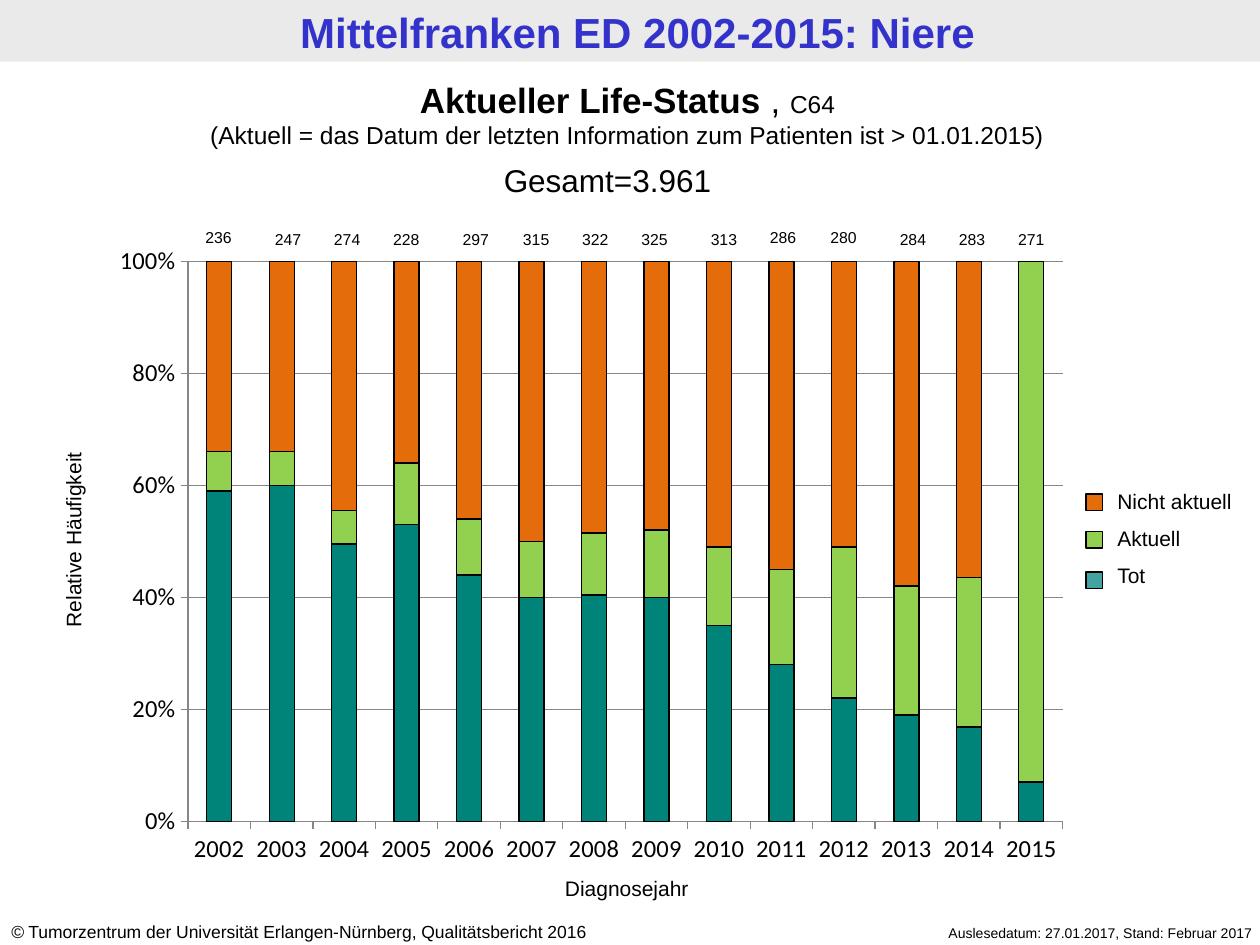
from dataclasses import dataclass

from lxml import etree
from pptx import Presentation
from pptx.chart.data import CategoryChartData
from pptx.dml.color import RGBColor
from pptx.enum.chart import XL_CHART_TYPE, XL_TICK_MARK
from pptx.enum.shapes import MSO_SHAPE
from pptx.enum.text import MSO_ANCHOR, MSO_AUTO_SIZE, PP_ALIGN
from pptx.oxml import parse_xml
from pptx.oxml.ns import nsdecls, qn
from pptx.util import Inches, Pt

LEFT, CENTER, RIGHT = PP_ALIGN.LEFT, PP_ALIGN.CENTER, PP_ALIGN.RIGHT
MIDDLE, GROW, NO_FIT = MSO_ANCHOR.MIDDLE, MSO_AUTO_SIZE.SHAPE_TO_FIT_TEXT, MSO_AUTO_SIZE.NONE
STACKED_100 = XL_CHART_TYPE.COLUMN_STACKED_100
TICK_OUT, RECTANGLE = XL_TICK_MARK.OUTSIDE, MSO_SHAPE.RECTANGLE


@dataclass(frozen=True)
class Theme:
    """Colours, fonts and type sizes in points."""
    black: str = "000000"
    band: str = "EAEAEA"
    title: str = "3333CC"
    grid: str = "868686"
    dead: str = "008378"
    dead_key: str = "008380"
    current: str = "92D050"
    outdated: str = "E46C0A"
    text_font: str = "Arial"
    chart_font: str = "Calibri"
    title_size: int = 24
    heading: int = 20
    total: int = 18
    note: int = 14
    label: int = 12
    source: int = 10
    count: int = 9
    date: int = 8


THEME = Theme()

YEARS = [str(year) for year in range(2002, 2016)]
SERIES = [
    ("Series 1", THEME.dead, (59, 60, 50, 53, 44, 40, 40, 40, 35, 28, 22, 19, 17, 7)),
    ("Series 2", THEME.current, (7, 6, 6, 11, 10, 10, 11, 12, 14, 17, 27, 23, 27, 93)),
    ("Series 3", THEME.outdated, (34, 34, 45, 36, 46, 50, 48, 48, 51, 55, 51, 58, 57, None)),
]
COUNTS = (236, 247, 274, 228, 297, 315, 322, 325, 313, 286, 280, 284, 283, 271)
COUNT_COLUMNS = (14.6, 20.1, 24.8, 29.5, 35, 39.8, 44.5, 49.2, 54.7, 59.4, 64.2, 69.7, 74.4, 79.1)
RAISED_COUNTS = (236, 286, 280)
LEGEND = [
    ("Nicht aktuell", THEME.outdated, 39.2, None),
    ("Aktuell", THEME.current, 42.2, None),
    ("Tot", THEME.dead_key, 45.4, 74),
]


def rgb(value):
    return RGBColor.from_string(value)


def apply(target, values):
    for name, value in values.items():
        setattr(target, name, value)


class SlideBuilder:
    """Places elements on a grid of 100 columns by 75 rows."""

    COLUMNS, ROWS = 100, 75

    def __init__(self, deck, theme):
        self.theme = theme
        self.column = deck.slide_width / self.COLUMNS
        self.row = deck.slide_height / self.ROWS
        self.slide = deck.slides.add_slide(deck.slide_layouts[5])
        self.shapes = self.slide.shapes

    def area(self, left, top, width, height):
        return (round(left * self.column), round(top * self.row),
                round(width * self.column), round(height * self.row))

    def style(self, font, size, color=None, **extra):
        font.color.rgb = rgb(color or self.theme.black)
        apply(font, {"name": self.theme.text_font, "size": Pt(size), **extra})

    def title(self, text, place):
        title = self.shapes.title
        apply(title, dict(zip(("left", "top", "width", "height"), self.area(*place))))
        frame = title.text_frame
        apply(frame, {"text": text, "auto_size": NO_FIT, "vertical_anchor": MIDDLE,
                      "margin_top": Inches(0.04), "margin_bottom": Inches(0.04)})
        frame.paragraphs[0].alignment = CENTER
        self.style(frame.paragraphs[0].runs[0].font, self.theme.title_size,
                   self.theme.title, bold=True)

    def text(self, lines, place, size, align=LEFT, gap=0, rotation=0):
        """Each line is a string or a list of (text, size, font values)."""
        box = self.shapes.add_textbox(*self.area(*place))
        box.rotation = rotation
        frame = box.text_frame
        apply(frame, {"word_wrap": True, "auto_size": GROW})
        for index, line in enumerate(lines):
            para = frame.add_paragraph() if index else frame.paragraphs[0]
            para.alignment = align
            if index and gap:
                para.space_before = Pt(gap)
            spans = [(line, size, {})] if isinstance(line, str) else line
            for words, points, extra in spans:
                span = para.add_run()
                span.text = words
                self.style(span.font, points, **extra)

    def rectangle(self, place, color, outlined=True, opacity=None):
        shape = self.shapes.add_shape(RECTANGLE, *self.area(*place))
        shape.shadow.inherit = False
        shape.fill.solid()
        shape.fill.fore_color.rgb = rgb(color)
        if opacity:
            fill_color = shape.element.spPr.find(qn("a:solidFill"))[0]
            etree.SubElement(fill_color, qn("a:alpha")).set("val", str(opacity * 1000))
        self.outline(shape.line, outlined)
        return shape

    def outline(self, line, visible=True):
        if visible:
            line.color.rgb = rgb(self.theme.black)
            line.width = Pt(0.75)
        else:
            line.fill.background()

    def chart(self, place, categories, series_rows, plot_shares):
        data = CategoryChartData()
        data.categories = categories
        for name, _, values in series_rows:
            data.add_series(name, values)
        chart = self.shapes.add_chart(STACKED_100, *self.area(*place), data).chart
        apply(chart, {"has_legend": False, "has_title": False})
        self.style(chart.font, self.theme.note, name=self.theme.chart_font)
        plot = chart.plots[0]
        apply(plot, {"gap_width": 150, "overlap": 100, "vary_by_categories": False})
        for series, (_, color, _) in zip(plot.series, series_rows):
            series.format.fill.solid()
            series.format.fill.fore_color.rgb = rgb(color)
            self.outline(series.format.line)

        # Axes
        values_axis = chart.value_axis
        apply(values_axis, {"major_unit": 0.2, "has_major_gridlines": True})
        apply(values_axis.tick_labels, {"number_format": "0%", "number_format_is_linked": False})
        for axis in (chart.category_axis, values_axis):
            axis.major_tick_mark = TICK_OUT
            axis.format.line.color.rgb = rgb(self.theme.grid)
        values_axis.major_gridlines.format.line.color.rgb = rgb(self.theme.grid)

        # Inner plot area as shares of the chart frame
        plot_area = chart.element.chart.plotArea
        for layout in plot_area.findall(qn("c:layout")):
            plot_area.remove(layout)
        sizes = "".join(f'<c:{key} val="{share}"/>' for key, share in zip("xywh", plot_shares))
        plot_area.insert(0, parse_xml(
            f'<c:layout {nsdecls("c")}><c:manualLayout><c:layoutTarget val="inner"/>'
            f'<c:xMode val="edge"/><c:yMode val="edge"/>{sizes}</c:manualLayout></c:layout>'))


def main():
    deck = Presentation()
    deck.slide_width, deck.slide_height = Inches(10), Inches(7.5)
    page = SlideBuilder(deck, THEME)

    # Title on its band
    page.title("Mittelfranken ED 2002-2015: Niere", (0.6, 0.1, 100, 4.9))
    band = page.rectangle((0, 0, 100, 4.9), THEME.band, outlined=False)
    page.shapes.title.element.addprevious(band.element)

    # Footer
    page.text([[("©", THEME.source, {"italic": True}),
                (" Tumorzentrum der Universität Erlangen-Nürnberg, Qualitätsbericht 2016",
                 THEME.source, {})]], (-0.1, 72.6, 52.4, 2.7), THEME.source)
    page.text(["Auslesedatum: 27.01.2017, Stand: Februar 2017"],
              (66.5, 72.9, 33.9, 2.4), THEME.date, RIGHT)

    # Chart and axis titles
    page.chart((7.9, 18.7, 78, 51.1), YEARS, SERIES, (0.09, 0.04, 0.89, 0.87))
    page.text(["Relative Häufigkeit"], (-6.2, 41.3, 24.1, 3.1), THEME.label, CENTER, rotation=270)
    page.text(["Diagnosejahr"], (38.5, 69, 22.5, 3.1), THEME.label, CENTER)

    # Case counts above the columns
    for count, column in zip(COUNTS, COUNT_COLUMNS):
        row = 17.6 if count in RAISED_COUNTS else 17.7
        page.text([str(count)], (column, row, 5.5, 2.5), THEME.count, CENTER)

    # Legend
    page.text([name for name, *_ in LEGEND], (87.7, 38.3, 12.3, 9.1), THEME.label, gap=6.7)
    for _, color, row, opacity in LEGEND:
        page.rectangle((86.2, row, 1.3, 1.3), color, opacity=opacity)

    # Headings
    page.text([[("Aktueller Life-Status ", THEME.heading, {"bold": True}),
                (", ", THEME.heading, {}), ("C64", THEME.note, {})],
               "(Aktuell = das Datum der letzten Information zum Patienten ist > 01.01.2015)"],
              (-0.4, 5.7, 100.4, 6.7), THEME.note, CENTER)
    page.text(["Gesamt=3.961"], (39, 12.3, 22, 4), THEME.total)

    deck.save("out.pptx")


if __name__ == "__main__":
    main()
